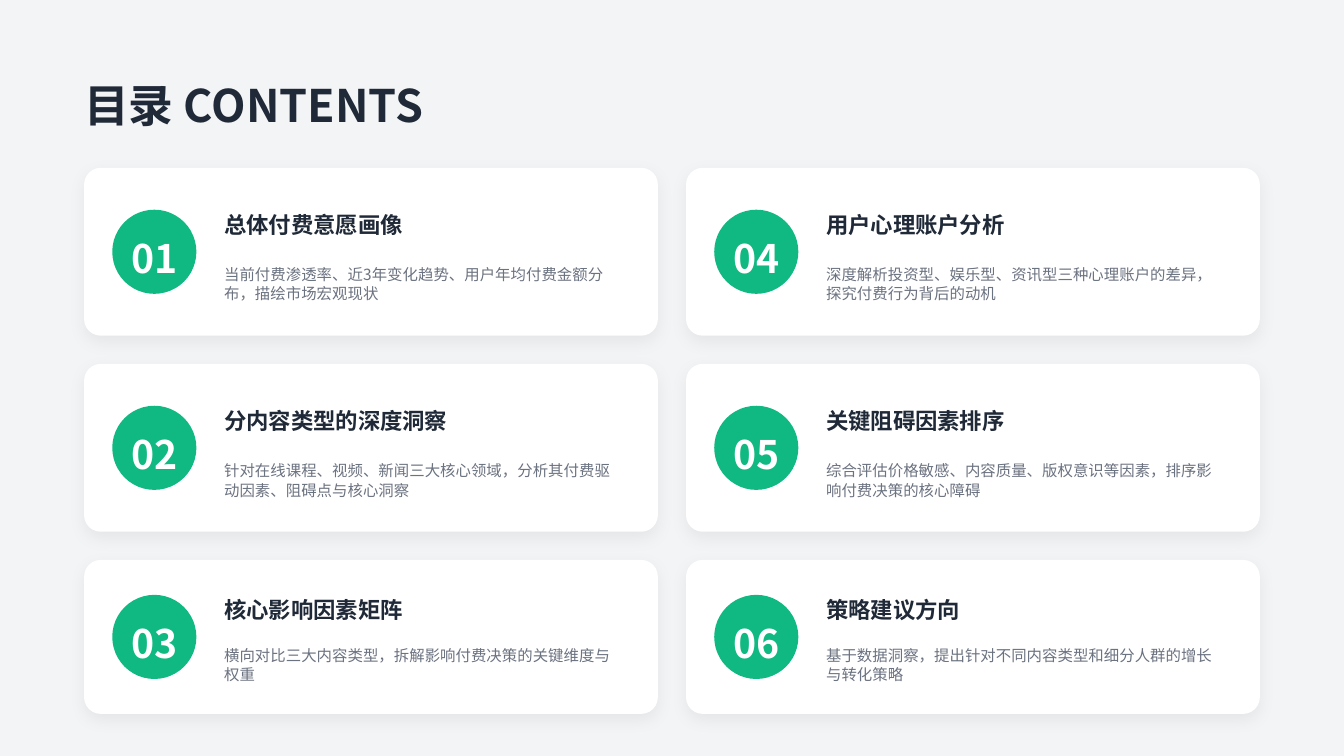
from dataclasses import dataclass
from typing import NamedTuple

import lxml.etree
import pptx
import pptx.dml.color
import pptx.enum.shapes
import pptx.enum.text
import pptx.oxml.ns
import pptx.shapes.autoshape
import pptx.slide
import pptx.util

Cm = pptx.util.Cm
Align = pptx.enum.text.PP_ALIGN
Preset = pptx.enum.shapes.MSO_SHAPE


@dataclass(frozen=True)
class Theme:
    font: str = "Noto Sans CJK SC"
    background: str = "F3F4F6"
    card: str = "FFFFFF"
    accent: str = "10B981"
    ink: str = "1F2937"
    muted: str = "6B7280"
    shadow: str = "000000"
    title_size: int = 32
    number_size: int = 28
    heading_size: int = 16
    detail_size: int = 11


class Box(NamedTuple):
    """A rectangle in centimetres."""
    left: float
    top: float
    width: float
    height: float

    def lengths(self) -> list[pptx.util.Length]:
        return [Cm(value) for value in self]


class TextStyle(NamedTuple):
    size: int
    color: str
    bold: bool = True
    align: Align = Align.LEFT
    line_spacing: float = 1.25


class Row(NamedTuple):
    top: float
    height: float
    detail_height: float
    detail_spacing: float


class Chapter(NamedTuple):
    heading: str
    detail: str


THEME = Theme()
TITLE_STYLE = TextStyle(THEME.title_size, THEME.ink)
NUMBER_STYLE = TextStyle(THEME.number_size, THEME.card, align=Align.CENTER)
HEADING_STYLE = TextStyle(THEME.heading_size, THEME.ink)

MARGIN = 2.12
COLUMN_PITCH = 15.17
CARD_WIDTH = 14.46
CORNER_RADIUS = 0.42
BADGE = 2.12
NUMBER_HEIGHT = 1.27
PADDING = 0.71
TEXT_INDENT = 3.53
ROWS = [
    Row(4.23, 4.23, 1.58, 1.08),
    Row(9.17, 4.23, 1.58, 1.08),
    Row(14.11, 3.88, 1.41, 1.0),
]
CHAPTERS = [
    Chapter("总体付费意愿画像", "当前付费渗透率、近3年变化趋势、用户年均付费金额分布，描绘市场宏观现状"),
    Chapter("分内容类型的深度洞察", "针对在线课程、视频、新闻三大核心领域，分析其付费驱动因素、阻碍点与核心洞察"),
    Chapter("核心影响因素矩阵", "横向对比三大内容类型，拆解影响付费决策的关键维度与权重"),
    Chapter("用户心理账户分析", "深度解析投资型、娱乐型、资讯型三种心理账户的差异，探究付费行为背后的动机"),
    Chapter("关键阻碍因素排序", "综合评估价格敏感、内容质量、版权意识等因素，排序影响付费决策的核心障碍"),
    Chapter("策略建议方向", "基于数据洞察，提出针对不同内容类型和细分人群的增长与转化策略"),
]


def rgb(color: str) -> pptx.dml.color.RGBColor:
    return pptx.dml.color.RGBColor.from_string(color)


def add_text(page: pptx.slide.Slide, box: Box, text: str, style: TextStyle) -> None:
    frame = page.shapes.add_textbox(*box.lengths()).text_frame
    frame.word_wrap = True
    frame.vertical_anchor = pptx.enum.text.MSO_ANCHOR.MIDDLE
    frame.margin_left = frame.margin_right = frame.margin_top = frame.margin_bottom = 0
    frame.text = text
    para = frame.paragraphs[0]
    para.alignment = style.align
    para.line_spacing = style.line_spacing
    for span in para.runs:
        span.font.name = THEME.font
        span.font.size = pptx.util.Pt(style.size)
        span.font.bold = style.bold
        span.font.color.rgb = rgb(style.color)
        east_asian = lxml.etree.SubElement(span.font._element, pptx.oxml.ns.qn("a:ea"))
        east_asian.set("typeface", THEME.font)


def add_filled(page: pptx.slide.Slide, preset: Preset, box: Box,
               color: str) -> pptx.shapes.autoshape.Shape:
    shape = page.shapes.add_shape(preset, *box.lengths())
    shape.shadow.inherit = False
    shape.fill.solid()
    shape.fill.fore_color.rgb = rgb(color)
    shape.line.fill.background()
    return shape


def add_soft_shadow(shape: pptx.shapes.autoshape.Shape) -> None:
    """Cast a 6 % shadow straight down, blurred by 12 pt and 4 pt away."""
    qn = pptx.oxml.ns.qn
    effects = shape._element.spPr.find(qn("a:effectLst"))
    shadow = lxml.etree.SubElement(
        effects, qn("a:outerShdw"), blurRad=str(pptx.util.Pt(12)),
        dist=str(pptx.util.Pt(4)), dir="5400000", algn="ctr", rotWithShape="0")
    color = lxml.etree.SubElement(shadow, qn("a:srgbClr"), val=THEME.shadow)
    lxml.etree.SubElement(color, qn("a:alpha"), val="6000")


def add_chapter(page: pptx.slide.Slide, index: int, chapter: Chapter) -> None:
    """Draw one card; the cards run down the first column, then the second."""
    column, row_index = divmod(index, len(ROWS))
    row = ROWS[row_index]
    left = MARGIN + column * COLUMN_PITCH
    badge_left = left + PADDING
    badge_top = row.top + (row.height - BADGE) / 2
    number_top = row.top + (row.height - NUMBER_HEIGHT) / 2
    text_left = left + TEXT_INDENT

    card = add_filled(page, Preset.ROUNDED_RECTANGLE,
                      Box(left, row.top, CARD_WIDTH, row.height), THEME.card)
    card.adjustments[0] = CORNER_RADIUS / row.height
    add_soft_shadow(card)
    add_filled(page, Preset.OVAL, Box(badge_left, badge_top, BADGE, BADGE), THEME.accent)
    add_text(page, Box(badge_left, number_top, BADGE, NUMBER_HEIGHT),
             f"{index + 1:02}", NUMBER_STYLE)
    add_text(page, Box(text_left, badge_top - 0.18, 10.23, 0.92),
             chapter.heading, HEADING_STYLE)
    detail_style = TextStyle(THEME.detail_size, THEME.muted, bold=False,
                             line_spacing=row.detail_spacing)
    add_text(page, Box(text_left, badge_top + BADGE / 2, 9.88, row.detail_height),
             chapter.detail, detail_style)


def main() -> None:
    deck = pptx.Presentation()
    deck.slide_width, deck.slide_height = Cm(33.87), Cm(19.05)
    page = deck.slides.add_slide(deck.slide_layouts[6])
    page.background.fill.solid()
    page.background.fill.fore_color.rgb = rgb(THEME.background)
    add_text(page, Box(MARGIN, 1.76, 14.11, 1.41), "目录 CONTENTS", TITLE_STYLE)
    for index, chapter in enumerate(CHAPTERS):
        add_chapter(page, index, chapter)
    deck.save("out.pptx")


if __name__ == "__main__":
    main()
